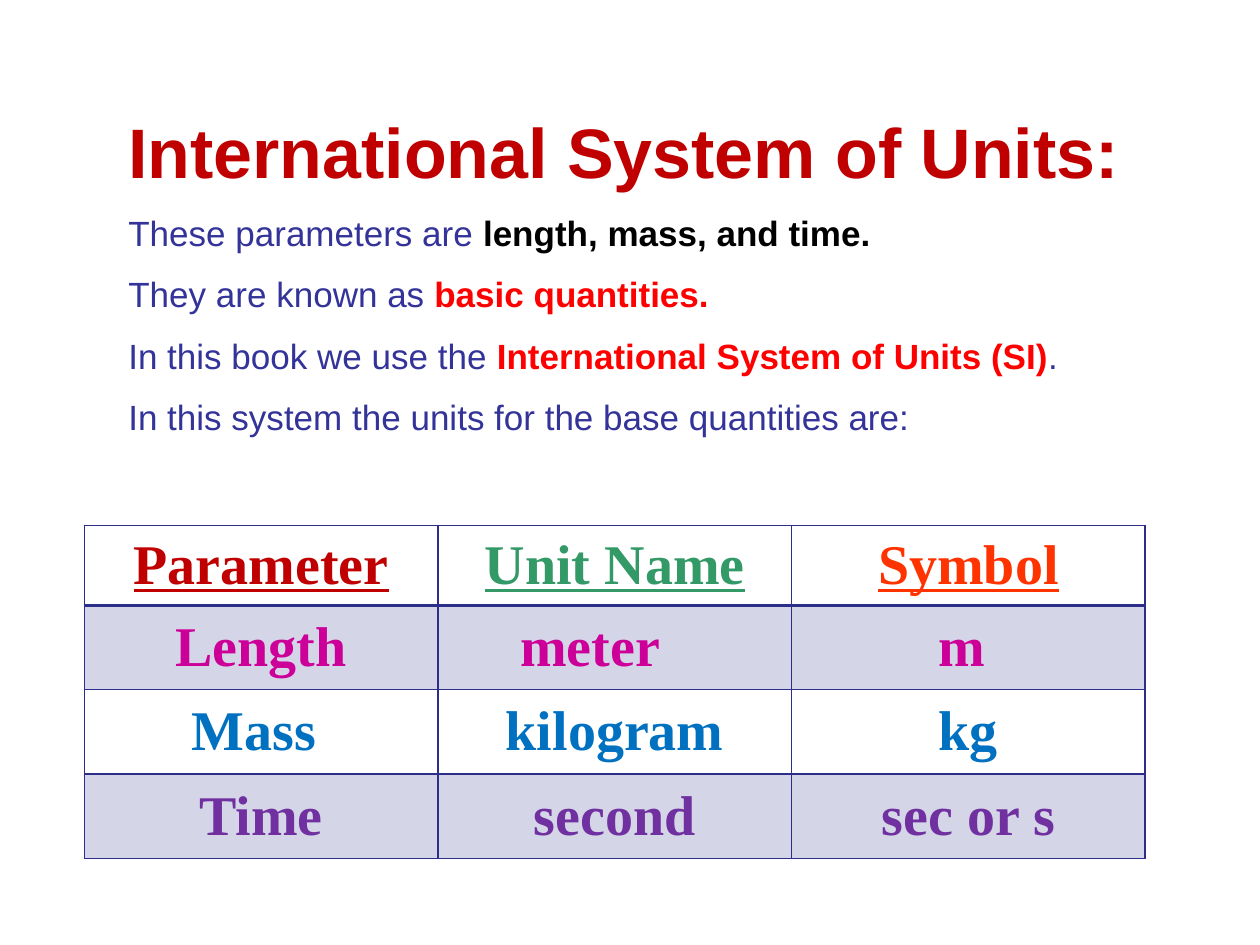
from lxml.etree import SubElement
from pptx import Presentation
from pptx.dml.color import RGBColor
from pptx.enum.text import MSO_ANCHOR, PP_ALIGN
from pptx.oxml.ns import qn
from pptx.util import Inches, Pt

COLORS = {
    "navy": "2D2D8A",
    "indigo": "333399",
    "dark_red": "C00000",
    "red": "FF0000",
    "black": "000000",
    "green": "339966",
    "orange": "FF3300",
    "magenta": "CC0099",
    "blue": "0070C0",
    "purple": "7030A0",
    "white": "FFFFFF",
    "band": "D5D5E8",
}


def add_run(paragraph, text, font_name, size, color, bold):
    run = paragraph.add_run()
    run.text = text
    run.font.name = font_name
    run.font.size = Pt(size)
    run.font.bold = bold
    run.font.color.rgb = RGBColor.from_string(COLORS[color])
    return run


def add_border(cell, side, width):
    line = SubElement(cell._tc.get_or_add_tcPr(), qn(f"a:{side}"), w=str(Pt(width)))
    fill = SubElement(line, qn("a:solidFill"))
    SubElement(fill, qn("a:srgbClr"), val=COLORS["navy"])


presentation = Presentation()
presentation.slide_width = Inches(10)
presentation.slide_height = Inches(7.5)
slide = presentation.slides.add_slide(presentation.slide_layouts[6])

introduction = [
    (40, [("International System of Units:", "dark_red", True)]),
    (20, [("These parameters are ", "indigo", False),
          ("length, mass, and time.", "black", True)]),
    (20, [("They are known as ", "indigo", False),
          ("basic quantities.", "red", True)]),
    (20, [("In this book we use the ", "indigo", False),
          ("International System of Units (SI)", "red", True),
          (".", "indigo", False)]),
    (20, [("In this system the units for the base quantities are:", "indigo", False)]),
]
text_box = slide.shapes.add_textbox(Inches(0.92), Inches(0.75), Inches(8.25), Inches(3.13))
text_frame = text_box.text_frame
text_frame.word_wrap = True
text_frame.margin_top = Inches(0.11)
for index, (size, runs) in enumerate(introduction):
    paragraph = text_frame.add_paragraph() if index else text_frame.paragraphs[0]
    paragraph.space_after = Pt(11)
    for text, color, bold in runs:
        add_run(paragraph, text, "Arial", size, color, bold)

unit_rows = [
    [("Parameter", "dark_red"), ("Unit Name", "green"), ("Symbol", "orange")],
    [("Length", "magenta"), ("meter\t", "magenta"), ("m ", "magenta")],
    [("Mass ", "blue"), ("kilogram", "blue"), ("kg", "blue")],
    [("Time", "purple"), ("second", "purple"), ("sec or s", "purple")],
]
table = slide.shapes.add_table(
    4, 3, Inches(0.67), Inches(4.17), Inches(8.42), Inches(2.63)
).table
table.first_row = False
table.horz_banding = False
for row_index, unit_row in enumerate(unit_rows):
    table.rows[row_index].height = Inches(0.67 if row_index else 0.63)
    for column_index, (text, color) in enumerate(unit_row):
        cell = table.cell(row_index, column_index)
        cell.vertical_anchor = MSO_ANCHOR.MIDDLE
        paragraph = cell.text_frame.paragraphs[0]
        paragraph.alignment = PP_ALIGN.CENTER
        run = add_run(paragraph, text, "Times New Roman", 32, color, True)
        run.font.underline = row_index == 0
        for side in ("lnL", "lnR", "lnT", "lnB"):
            header_rule = (row_index, side) in ((0, "lnB"), (1, "lnT"))
            add_border(cell, side, 2 if header_rule else 1)
        cell.fill.solid()
        cell.fill.fore_color.rgb = RGBColor.from_string(
            COLORS["band" if row_index % 2 else "white"]
        )

presentation.save("out.pptx")
